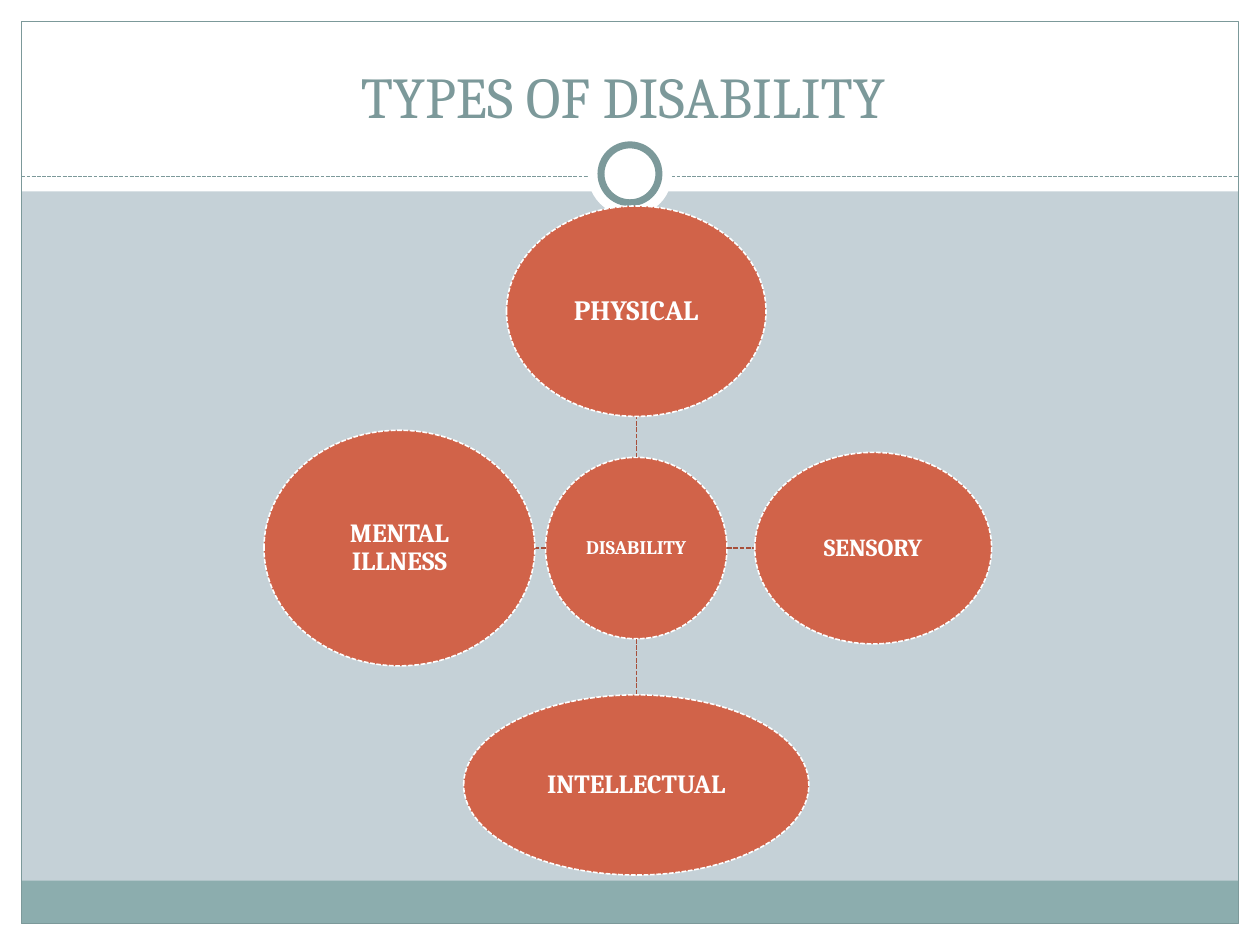
import pptx
import pptx.dml.color
import pptx.enum.dml
import pptx.enum.shapes
import pptx.enum.text
import pptx.oxml
import pptx.util
from pptx.util import Inches

SHAPE = pptx.enum.shapes.MSO_SHAPE
DASH = pptx.enum.dml.MSO_LINE.SQUARE_DOT
ANCHOR = pptx.enum.text.MSO_ANCHOR
CENTER = pptx.enum.text.PP_ALIGN.CENTER

TITLE = "TYPES OF DISABILITY "
HUB = ("DISABILITY", 1.44, 1.44, 11)
# label, direction from the hub (x, y), width, height, type size
TYPES = [
    ("PHYSICAL", (0, -1), 2.06, 1.67, 16),
    ("SENSORY", (1, 0), 1.88, 1.52, 14),
    ("INTELLECTUAL", (0, 1), 2.74, 1.43, 15),
    ("MENTAL ILLNESS", (-1, 0), 2.15, 1.87, 15),
]
HUB_X, HUB_Y, SPOKE = 5.05, 4.35, 1.88

THEME = {
    "font": "Cambria", "title_size": 33,
    "background": "C5D1D7", "white": "FFFFFF", "band": "8CADAE",
    "accent": "7C999A", "bubble": "D16349", "spoke": "A74F3A",
}
WIDTH, HEIGHT, MARGIN = 10, 7.5, 0.17
INNER_W, INNER_H = WIDTH - 2 * MARGIN, HEIGHT - 2 * MARGIN
HEADER_H, BAND_H, RULE_Y = 1.52, 0.34, 1.4
RING_X, RING_Y = 5, 1.38


def color(name):
    return pptx.dml.color.RGBColor.from_string(THEME[name])


def style_line(line, name, width, dash=None):
    line.color.rgb = color(name)
    line.width = pptx.util.Pt(width)
    if dash:
        line.dash_style = dash


def style_text(paragraph, size, name, bold=False):
    paragraph.alignment = CENTER
    paragraph.font.name = THEME["font"]
    paragraph.font.size = pptx.util.Pt(size)
    paragraph.font.bold = bold
    paragraph.font.color.rgb = color(name)


def add_plain(slide, kind, left, top, width, height, fill=None):
    """Add a shape without shadow or outline, and unfilled if fill is None."""
    shape = slide.shapes.add_shape(
        kind, Inches(left), Inches(top), Inches(width), Inches(height))
    shape.shadow.inherit = False
    shape.line.fill.background()
    if fill:
        shape.fill.solid()
        shape.fill.fore_color.rgb = color(fill)
    else:
        shape.fill.background()
    return shape


def add_ellipse(slide, x, y, width, height, fill):
    """Add an ellipse centred on x, y."""
    return add_plain(slide, SHAPE.OVAL, x - width / 2, y - height / 2,
                     width, height, fill)


def add_dashed(slide, x1, y1, x2, y2, name, width):
    connector = slide.shapes.add_connector(
        pptx.enum.shapes.MSO_CONNECTOR.STRAIGHT,
        Inches(x1), Inches(y1), Inches(x2), Inches(y2))
    style_line(connector.line, name, width, DASH)
    connector.element.spPr.append(
        pptx.oxml.parse_xml(
            '<a:effectLst xmlns:a='
            '"http://schemas.openxmlformats.org/drawingml/2006/main"/>'))


def add_bubble(slide, label, x, y, width, height, size):
    bubble = add_ellipse(slide, x, y, width, height, "bubble")
    style_line(bubble.line, "white", 0.9, DASH)
    frame = bubble.text_frame
    frame.word_wrap = True
    frame.vertical_anchor = ANCHOR.MIDDLE
    frame.margin_left = frame.margin_right = Inches(0.01)
    frame.margin_top = frame.margin_bottom = Inches(0.01)
    frame.text = label
    style_text(frame.paragraphs[0], size, "white", bold=True)
    frame.paragraphs[0].line_spacing = 0.9


def add_backdrop(slide):
    slide.background.fill.solid()
    slide.background.fill.fore_color.rgb = color("background")
    panels = [
        (0, HEIGHT - MARGIN, WIDTH, MARGIN, "white"),
        (0, 0, WIDTH, HEADER_H, "white"),
        (0, 0, MARGIN, HEIGHT, "white"),
        (WIDTH - MARGIN, 0, MARGIN, HEIGHT, "white"),
        (MARGIN, HEIGHT - MARGIN - BAND_H, INNER_W, BAND_H, "band"),
    ]
    for panel in panels:
        add_plain(slide, SHAPE.RECTANGLE, *panel)
    border = add_plain(slide, SHAPE.RECTANGLE, MARGIN, MARGIN, INNER_W, INNER_H)
    style_line(border.line, "accent", 0.75)
    add_dashed(slide, MARGIN, RULE_Y, WIDTH - MARGIN, RULE_Y, "accent", 0.75)
    add_ellipse(slide, RING_X, RING_Y, 0.67, 0.67, "white")
    ring = add_ellipse(slide, RING_X, RING_Y, 0.46, 0.46, "white")
    style_line(ring.line, "accent", 4)


def place_title(slide):
    title = slide.shapes.title
    title.left, title.top = Inches(0.33), Inches(0.25)
    title.width, title.height = Inches(9.33), Inches(0.83)
    title.text_frame.text = TITLE
    title.text_frame.word_wrap = True
    title.text_frame.vertical_anchor = ANCHOR.BOTTOM
    style_text(title.text_frame.paragraphs[0], THEME["title_size"], "accent")
    # The title comes in front of the white header panel.
    title.element.getparent().append(title.element)


def add_radial_diagram(slide):
    hub_label, hub_w, hub_h, hub_size = HUB
    add_bubble(slide, hub_label, HUB_X, HUB_Y, hub_w, hub_h, hub_size)
    for label, (dx, dy), width, height, size in TYPES:
        x, y = HUB_X + dx * SPOKE, HUB_Y + dy * SPOKE
        add_dashed(slide, HUB_X + dx * hub_w / 2, HUB_Y + dy * hub_h / 2,
                   x - dx * width / 2, y - dy * height / 2, "spoke", 0.9)
        add_bubble(slide, label, x, y, width, height, size)


def main():
    deck = pptx.Presentation()
    deck.slide_width, deck.slide_height = Inches(WIDTH), Inches(HEIGHT)
    slide = deck.slides.add_slide(deck.slide_layouts.get_by_name("Title Only"))
    add_backdrop(slide)
    place_title(slide)
    add_radial_diagram(slide)
    deck.save("out.pptx")


if __name__ == "__main__":
    main()
